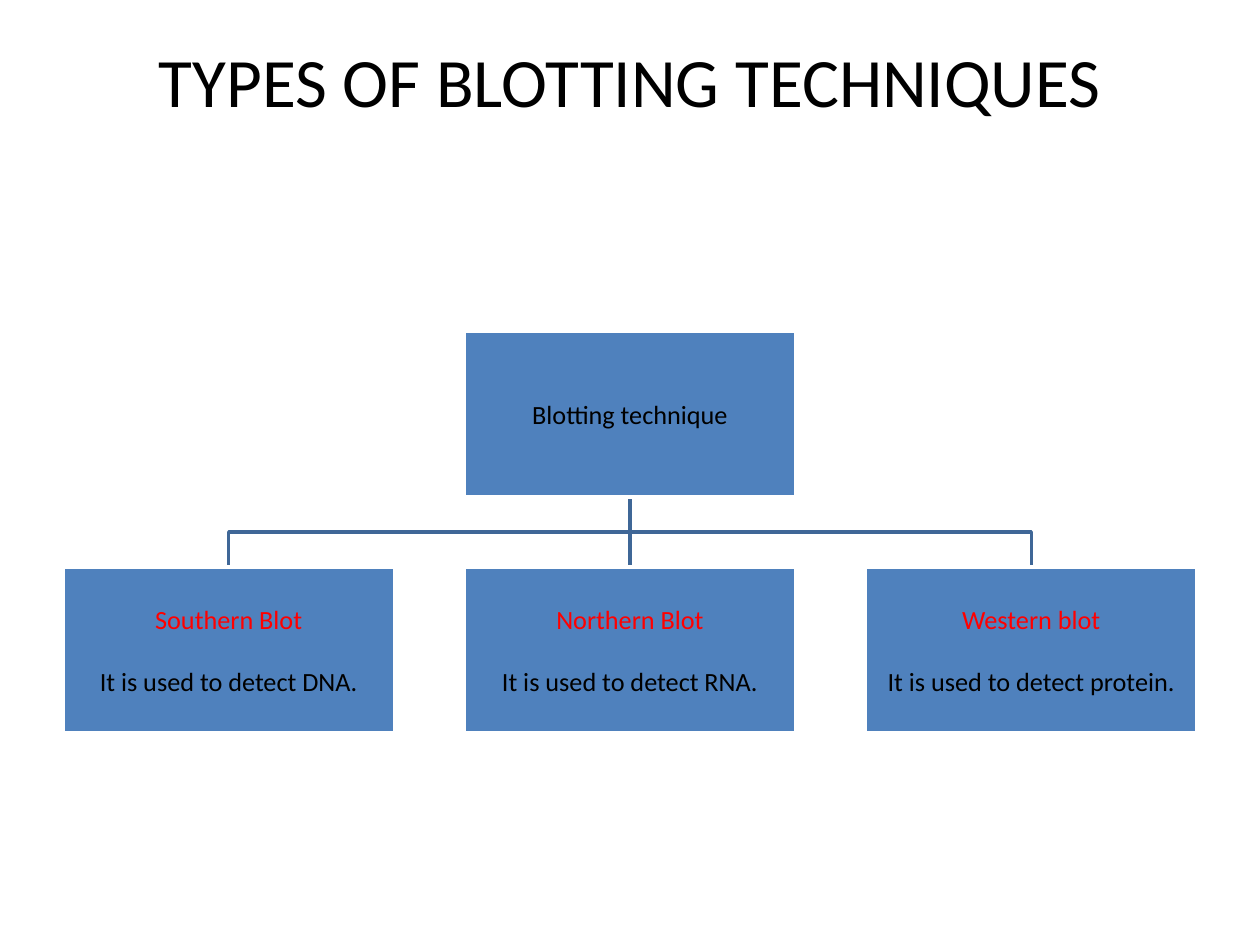
from lxml import etree
from pptx import Presentation
from pptx.dml.color import RGBColor
from pptx.enum.shapes import MSO_CONNECTOR, MSO_SHAPE
from pptx.enum.text import MSO_ANCHOR, PP_ALIGN
from pptx.oxml.ns import qn
from pptx.util import Pt

RECTANGLE = MSO_SHAPE.RECTANGLE
STRAIGHT = MSO_CONNECTOR.STRAIGHT
TOP, MIDDLE = MSO_ANCHOR.TOP, MSO_ANCHOR.MIDDLE
CENTER = PP_ALIGN.CENTER

BLACK, WHITE, RED, BLUE, DARK_BLUE = "000000", "FFFFFF", "FF0000", "4F81BD", "3F6797"
SLIDE_WIDTH, SLIDE_HEIGHT, MARGIN = 720, 540, 36
BOX_WIDTH, BOX_HEIGHT = 189.4, 94.7
ROOT_TOP, CHILD_TOP = 189.4, 324
BLOTS = [
    ("Southern Blot", "It is used to detect DNA."),
    ("Northern Blot", "It is used to detect RNA."),
    ("Western blot", "It is used to detect protein."),
]


def color(hex_value):
    """Return the colour for a hex string."""
    return RGBColor.from_string(hex_value)


def set_line(line, hex_value):
    """Give a line its colour and the common width."""
    line.color.rgb = color(hex_value)
    line.width = Pt(2)


def write(para, text, size=15, fill=BLACK, before=0):
    """Write one centred, formatted paragraph."""
    para.alignment = CENTER
    para.space_before = Pt(before)
    span = para.add_run()
    span.text = text
    span.font.name = "Calibri"
    span.font.size = Pt(size)
    span.font.color.rgb = color(fill)


def set_frame(frame, anchor, inset):
    """Set wrapping, anchor and vertical insets of a text frame."""
    frame.word_wrap = True
    frame.vertical_anchor = anchor
    frame.margin_top = frame.margin_bottom = Pt(inset)


def add_title(page, text):
    """Place and fill the title placeholder."""
    title = page.shapes.title
    title.left, title.top = Pt(MARGIN), Pt(21.6)
    title.width, title.height = Pt(SLIDE_WIDTH - 2 * MARGIN), Pt(90)
    set_frame(title.text_frame, TOP, 0)
    write(title.text_frame.paragraphs[0], text, size=39.6)


def add_box(page, center, top):
    """Add a chart box and return its text frame."""
    box = page.shapes.add_shape(
        RECTANGLE, Pt(center - BOX_WIDTH / 2), Pt(top), Pt(BOX_WIDTH), Pt(BOX_HEIGHT))
    box.shadow.inherit = False
    box.fill.solid()
    box.fill.fore_color.rgb = color(BLUE)
    set_line(box.line, WHITE)
    frame = box.text_frame
    set_frame(frame, MIDDLE, 0.7)
    frame.margin_left = frame.margin_right = Pt(0.7)
    return frame


def add_branch(page, start, end):
    """Join the root box to a child centre with a straight or bent line."""
    top, bottom = ROOT_TOP + BOX_HEIGHT, CHILD_TOP
    if start == end:
        branch = page.shapes.add_connector(STRAIGHT, Pt(start), Pt(top), Pt(end), Pt(bottom))
        etree.SubElement(branch.element.spPr, qn("a:effectLst"))
    else:
        bend = (top + bottom) / 2
        builder = page.shapes.build_freeform(Pt(start), Pt(top))
        corners = [(start, bend), (end, bend), (end, bottom)]
        builder.add_line_segments([(Pt(x), Pt(y)) for x, y in corners], close=False)
        branch = builder.convert_to_shape()
        branch.shadow.inherit = False
        branch.fill.background()
    set_line(branch.line, DARK_BLUE)


def main():
    """Build the slide and save it."""
    deck = Presentation()
    deck.slide_width, deck.slide_height = Pt(SLIDE_WIDTH), Pt(SLIDE_HEIGHT)
    page = deck.slides.add_slide(deck.slide_layouts[5])
    add_title(page, "TYPES OF BLOTTING TECHNIQUES")

    middle = SLIDE_WIDTH / 2
    pitch = (SLIDE_WIDTH - 2 * MARGIN - BOX_WIDTH) / (len(BLOTS) - 1)
    centers = [MARGIN + BOX_WIDTH / 2 + index * pitch for index in range(len(BLOTS))]
    centers = [round(center, 2) for center in centers]
    for center in centers:
        add_branch(page, middle, center)

    root = add_box(page, middle, ROOT_TOP)
    write(root.paragraphs[0], "Blotting technique")
    for center, (name, use) in zip(centers, BLOTS):
        frame = add_box(page, center, CHILD_TOP)
        write(frame.paragraphs[0], name, fill=RED)
        write(frame.add_paragraph(), use, before=17.7)
    deck.save("out.pptx")


if __name__ == "__main__":
    main()
